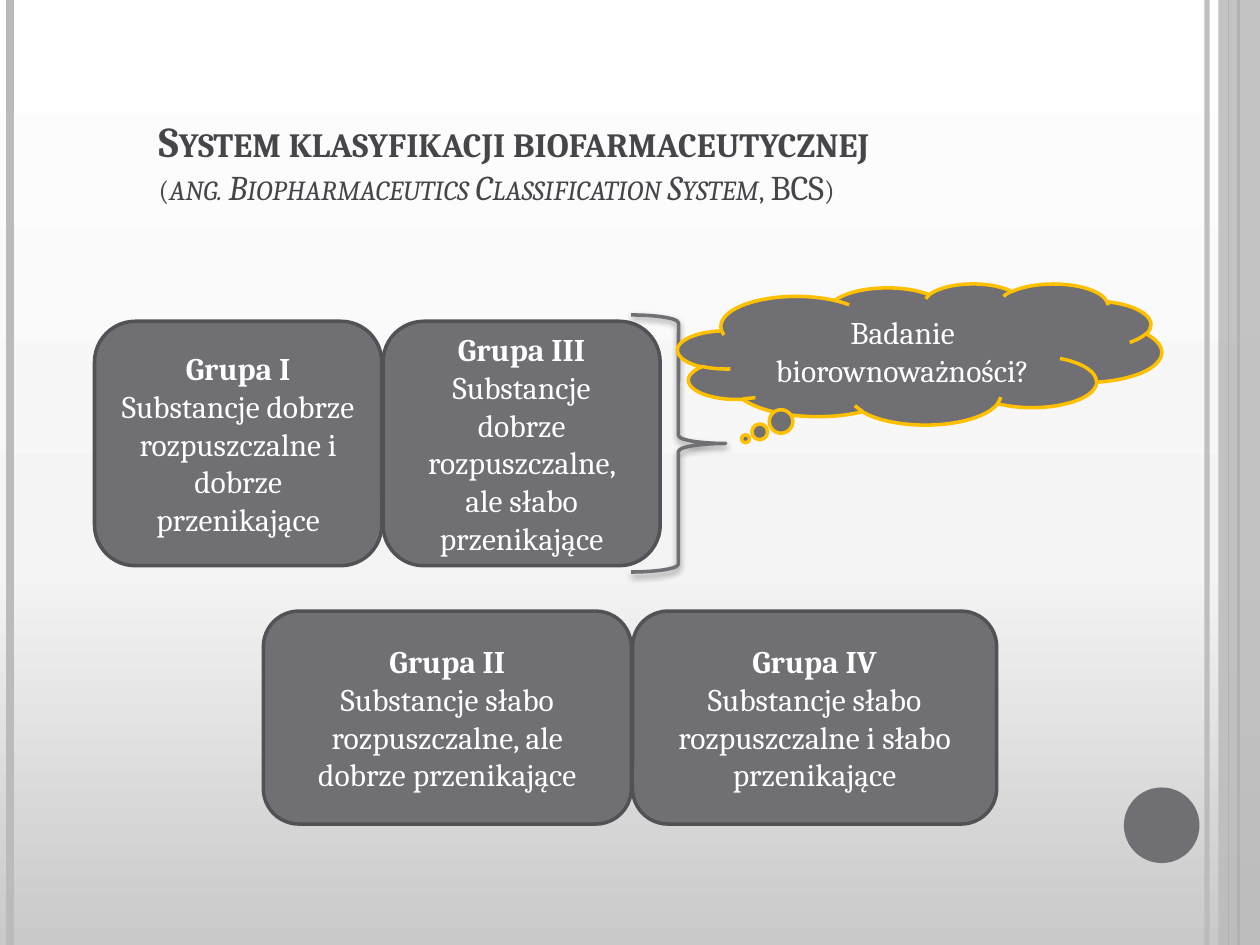
from pptx import Presentation
from pptx.util import Inches, Pt
from pptx.dml.color import RGBColor as RGB
from pptx.enum.shapes import MSO_SHAPE as Shape, MSO_CONNECTOR as Conn
from pptx.enum.text import PP_ALIGN as Align, MSO_ANCHOR as Anchor, MSO_AUTO_SIZE as Fit
from pptx.oxml.ns import qn
from lxml.etree import SubElement as Sub
from copy import deepcopy

# Content
TITLE = "System klasyfikacji biofarmaceutycznej "
NOTE = [("(", False), ("ang. Biopharmaceutics Classification System", True),
        (", BCS)", False)]
# Each row: left, top, height, then (width, name, text) for its boxes
ROWS = [
    (0.75, 2.55, 1.94, [
        (2.28, "Grupa I", "Substancje dobrze rozpuszczalne i dobrze przenikające"),
        (2.2, "Grupa III", "Substancje dobrze rozpuszczalne, ale słabo przenikające")]),
    (2.09, 4.85, 1.69, [
        (2.92, "Grupa II", "Substancje słabo rozpuszczalne, ale dobrze przenikające"),
        (2.89, "Grupa IV", "Substancje słabo rozpuszczalne i słabo przenikające")]),
]
GAP = 0.01
CLOUD = "Badanie biorownoważności?"

THEME = dict(
    font="Cambria", head=24.3, sub=19.8, body=18, line=2,
    gray="6F6F74", edge="525256", pale="BBBBBC", ink="46464A",
    white="FFFFFF", gold="FFC000",
    back=[(0, "C9C9C9"), (0.4, "F4F4F4"), (1, "FFFFFF")])
# Vertical rules: x, colour, width, opacity
RULES = [(9.58, "pale", 3, 93), (0.08, "pale", 4.5, 100),
         (9.83, "gray", 1.5, 100), (9.75, "gray", 0.75, 100)]


def color(name):
    return RGB.from_string(THEME[name])


def fade(part, pct):
    """Set the opacity of the first solid colour in an element."""
    rgb = next(part.iter(qn("a:srgbClr")))
    Sub(rgb, qn("a:alpha"), val=str(pct * 1000))


def style(font, size, tint, bold=None):
    font.name, font.size, font.bold = THEME["font"], Pt(THEME[size]), bold
    font.color.rgb = color(tint)


def add(kind, box, fill=None, line=None):
    shape = slide.shapes.add_shape(kind, *map(Inches, box))
    shape.shadow.inherit = False
    if fill:
        shape.fill.solid()
        shape.fill.fore_color.rgb = color(fill)
    else:
        shape.fill.background()
    if line:
        shape.line.color.rgb = color(line)
        shape.line.width = Pt(THEME["line"])
    else:
        shape.line.fill.background()
    return shape


def write(shape, lines):
    frame = shape.text_frame
    frame.word_wrap, frame.vertical_anchor = True, Anchor.MIDDLE
    frame.text = "\n".join(text for text, _ in lines)
    for para, (_, bold) in zip(frame.paragraphs, lines):
        para.alignment = Align.CENTER
        style(para.font, "body", "white", bold)


deck = Presentation()
deck.slide_width, deck.slide_height = Inches(10), Inches(7.5)
slide = deck.slides.add_slide(deck.slide_layouts[5])

# Background gradient, dark at the foot
fill = slide.background.fill
fill.gradient()
fill.gradient_angle = 90
stops = slide.element.xpath(".//a:gsLst")[0]
stops.insert(1, deepcopy(stops[0]))
for stop, (pos, tint) in zip(fill.gradient_stops, THEME["back"]):
    stop.position = pos
    stop.color.rgb = RGB.from_string(tint)

# Side rules, band and disc
for x, tint, width, alpha in RULES:
    rule = slide.shapes.add_connector(
        Conn.STRAIGHT, Inches(x), 0, Inches(x), deck.slide_height)
    rule.line.color.rgb = color(tint)
    rule.line.width = Pt(width)
    if alpha < 100:
        fade(rule.line._get_or_add_ln(), alpha)
    Sub(rule._element.spPr, qn("a:effectLst"))
band = add(Shape.RECTANGLE, (9.67, 0, 0.33, 7.5), "pale")
fade(band._element.spPr, 87)
add(Shape.OVAL, (8.92, 6.25, 0.6, 0.6), "gray")

# Title
title = slide.shapes.title
title.left, title.top, title.width, title.height = map(
    Inches, (1.16, 0.52, 7.68, 1.18))
frame = title.text_frame
frame.auto_size, frame.word_wrap = Fit.NONE, True
frame.vertical_anchor = Anchor.BOTTOM
para = frame.paragraphs[0]
para.alignment = Align.LEFT
run = para.add_run()
run.text = TITLE
style(run.font, "head", "ink", True)
para.add_line_break()
for text, slant in NOTE:
    run = para.add_run()
    run.text = text
    style(run.font, "sub", "ink", False)
    run.font.italic = slant
for run in para.runs:
    run.font._element.set("cap", "small")

# Group boxes, side by side in each row
for left, top, height, boxes in ROWS:
    for width, name, text in boxes:
        box = add(Shape.ROUNDED_RECTANGLE, (left, top, width, height),
                  "gray", "edge")
        write(box, [(name, True), (text, False)])
        left += width + GAP

# Brace with a soft shadow
brace = add(Shape.RIGHT_BRACE, (5.01, 2.5, 0.75, 2.04), line="gray")
effects = brace._element.spPr.find(qn("a:effectLst"))
shade = Sub(effects, qn("a:outerShdw"), blurRad=str(Pt(4)), dist=str(Pt(2)),
            dir=str(90 * 60000), rotWithShape="0")
Sub(shade, qn("a:srgbClr"), val="000000")
fade(shade, 40)

# Thought cloud
cloud = add(Shape.CLOUD_CALLOUT, (5.38, 2.25, 3.84, 1.12), "gray", "gold")
cloud.adjustments[0], cloud.adjustments[1] = -0.36, 0.6
write(cloud, [(CLOUD, False)])

deck.save("out.pptx")
